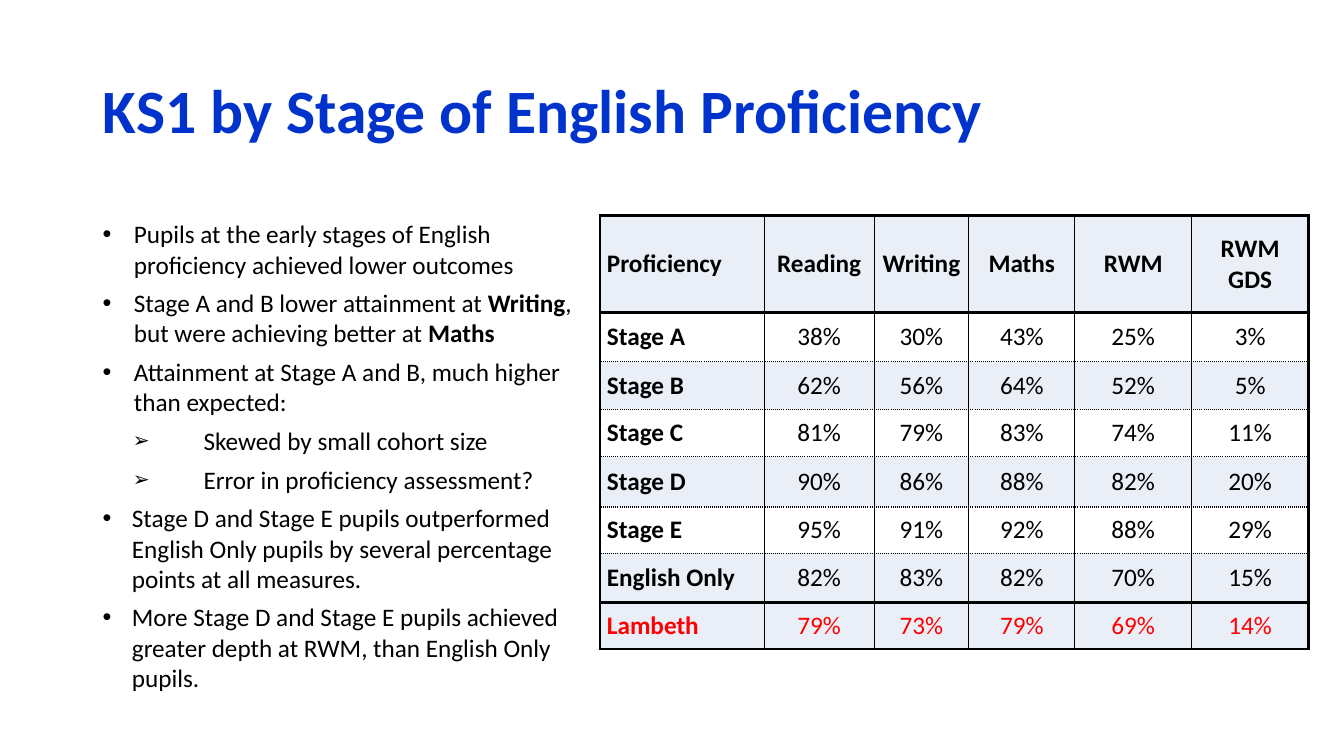
from lxml.etree import SubElement
from pptx import Presentation
from pptx.dml.color import RGBColor
from pptx.enum.text import MSO_ANCHOR, MSO_AUTO_SIZE, PP_ALIGN
from pptx.oxml.ns import qn
from pptx.util import Inches, Pt

BLACK, RED, BLUE = "000000", "FF0000", "0033CC"
WHITE, PALE = "FFFFFF", "EAEFF7"

# Border styles: width in points, dash
THICK, THIN, DOTTED = (2.25, "solid"), (1, "solid"), (1, "sysDot")

# Table content: the last row is the total
HEADER = ["Proficiency", "Reading", "Writing", "Maths", "RWM", "RWM GDS"]
RESULTS = [
    ("Stage A", 38, 30, 43, 25, 3),
    ("Stage B", 62, 56, 64, 52, 5),
    ("Stage C", 81, 79, 83, 74, 11),
    ("Stage D", 90, 86, 88, 82, 20),
    ("Stage E", 95, 91, 92, 88, 29),
    ("English Only", 82, 83, 82, 70, 15),
    ("Lambeth", 79, 73, 79, 69, 14),
]
COL_WIDTHS = [1.63, 1.09, 0.94, 1.05, 1.16, 1.16]
ROW_HEIGHTS = [0.96, 0.49, 0.47, 0.47, 0.5, 0.46, 0.49, 0.46]

# Bullet styles: character, size in percent, left margin, hanging indent
POINT = ("•", 100, 0.31, 0.31)
SUBPOINT = ("➢", 80, 0.49, 0.19)
FINDING = ("•", 100, 0.29, 0.29)

# Every second piece of a paragraph is bold
COMMENTS = [
    (POINT, ["Pupils at the early stages of English proficiency achieved lower outcomes"]),
    (POINT, ["Stage A and B lower attainment at ", "Writing",
             ", but were achieving better at ", "Maths"]),
    (POINT, ["Attainment at Stage A and B, much higher than expected:"]),
    (SUBPOINT, ["\tSkewed by small cohort size"]),
    (SUBPOINT, ["\tError in proficiency assessment?"]),
    (FINDING, ["Stage D and Stage E pupils outperformed English Only pupils "
               "by several percentage points at all measures."]),
    (FINDING, ["More Stage D and Stage E pupils achieved greater depth at RWM, "
               "than English Only pupils."]),
]


def color(value):
    return RGBColor.from_string(value)


def set_attrs(obj, **values):
    for name, value in values.items():
        setattr(obj, name, value)


class SlideBuilder:
    font = "Calibri"
    body_size = 18
    title_size = 44
    tab_width = 1

    def __init__(self, prs):
        self.s = prs.slides.add_slide(prs.slide_layouts[5])

    def run(self, p, text, size=body_size, ink=BLACK, bold=False):
        r = p.add_run()
        r.text = text
        set_attrs(r.font, name=self.font, size=Pt(size), bold=bold)
        r.font.color.rgb = color(ink)

    # Title placeholder
    def title(self, text, left, top, width, height):
        sp = self.s.shapes.title
        set_attrs(sp, left=Inches(left), top=Inches(top),
                  width=Inches(width), height=Inches(height))
        tf = sp.text_frame
        set_attrs(tf, vertical_anchor=MSO_ANCHOR.MIDDLE, word_wrap=True,
                  auto_size=MSO_AUTO_SIZE.NONE)
        p = tf.paragraphs[0]
        set_attrs(p, alignment=PP_ALIGN.LEFT, line_spacing=0.9)
        self.run(p, text, self.title_size, BLUE, bold=True)

    # Bulleted text
    def bullets(self, items, left, top, width, height):
        sp = self.s.shapes.add_textbox(Inches(left), Inches(top),
                                       Inches(width), Inches(height))
        tf = sp.text_frame
        set_attrs(tf, word_wrap=True, auto_size=MSO_AUTO_SIZE.SHAPE_TO_FIT_TEXT)
        for i, (style, pieces) in enumerate(items):
            p = tf.add_paragraph() if i else tf.paragraphs[0]
            p.space_after = Pt(6)
            self.bullet(p, *style)
            for j, text in enumerate(pieces):
                self.run(p, text, bold=j % 2 == 1)

    def bullet(self, p, char, percent, margin, hang):
        pPr = p._p.get_or_add_pPr()
        lengths = {"marL": margin, "indent": -hang, "defTabSz": self.tab_width}
        for name, length in lengths.items():
            pPr.set(name, str(Inches(length)))
        SubElement(pPr, qn("a:buSzPct"), val=str(percent * 1000))
        SubElement(pPr, qn("a:buFont"), typeface="Arial")
        SubElement(pPr, qn("a:buChar"), char=char)

    # Table
    def border(self, cell, side, width, dash):
        ln = SubElement(cell._tc.get_or_add_tcPr(), qn("a:ln" + side), w=str(Pt(width)))
        SubElement(SubElement(ln, qn("a:solidFill")), qn("a:srgbClr"), val=BLACK)
        SubElement(ln, qn("a:prstDash"), val=dash)

    def cell(self, cell, text, background, edges, align, ink, bold):
        set_attrs(cell, vertical_anchor=MSO_ANCHOR.MIDDLE,
                  margin_left=Inches(0.07), margin_right=Inches(0.07),
                  margin_top=0, margin_bottom=0)
        for side, style in edges.items():
            self.border(cell, side, *style)
        cell.fill.solid()
        cell.fill.fore_color.rgb = color(background)
        p = cell.text_frame.paragraphs[0]
        p.alignment = align
        self.run(p, text, ink=ink, bold=bold)

    def table(self, rows, widths, heights, left, top):
        table = self.s.shapes.add_table(
            len(rows), len(widths), Inches(left), Inches(top),
            Inches(sum(widths)), Inches(sum(heights))).table
        for col, width in zip(table.columns, widths):
            col.width = Inches(width)
        for row, height in zip(table.rows, heights):
            row.height = Inches(height)

        # Thick frame, thick lines around header and total, dotted between rows
        total = len(rows) - 1
        row_lines = [THICK, THICK] + [DOTTED] * (total - 2) + [THICK, THICK]
        col_lines = [THICK] + [THIN] * (len(widths) - 1) + [THICK]

        for i, values in enumerate(rows):
            is_header, is_total = i == 0, i == total
            background = WHITE if i % 2 and not is_total else PALE
            ink = RED if is_total else BLACK
            for j, text in enumerate(values):
                is_label = j == 0
                edges = {"L": col_lines[j], "R": col_lines[j + 1],
                         "T": row_lines[i], "B": row_lines[i + 1]}
                align = PP_ALIGN.LEFT if is_label else PP_ALIGN.CENTER
                self.cell(table.cell(i, j), text, background, edges, align,
                          ink, bold=is_header or is_label)


def main():
    prs = Presentation()
    set_attrs(prs, slide_width=Inches(13.33), slide_height=Inches(7.5))
    slide = SlideBuilder(prs)
    slide.title("KS1 by Stage of English Proficiency", 0.92, 0.4, 11.5, 1.45)
    rows = [HEADER] + [[name] + [f"{v}%" for v in values] for name, *values in RESULTS]
    slide.table(rows, COL_WIDTHS, ROW_HEIGHTS, 5.95, 2.14)
    slide.bullets(COMMENTS, 0.92, 2.12, 4.89, 4.85)
    prs.save("out.pptx")


if __name__ == "__main__":
    main()
